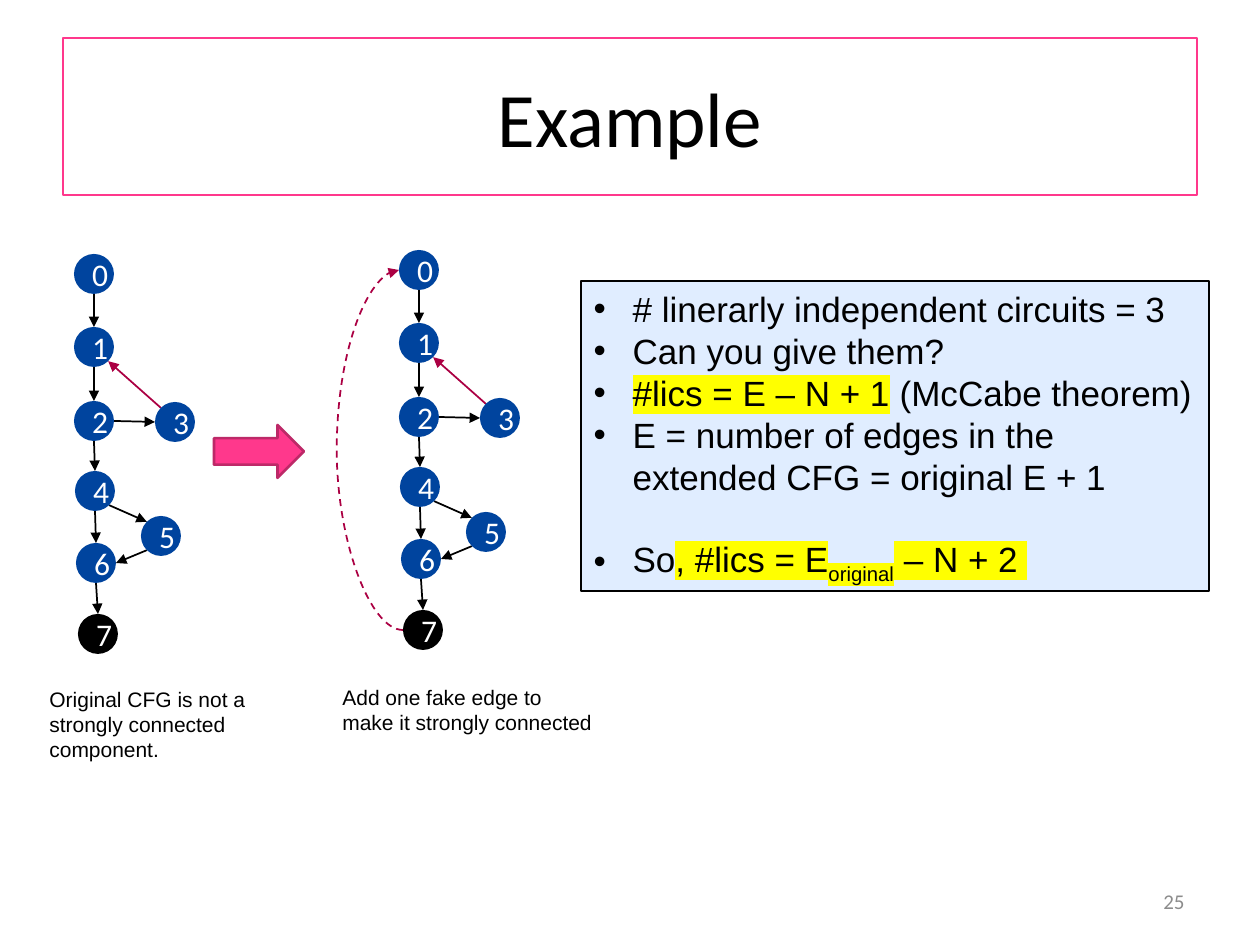
import pptx
import pptx.util
import pptx.dml.color
import pptx.enum.dml
import pptx.enum.shapes
import pptx.enum.text
import pptx.oxml
import pptx.oxml.ns
from lxml import etree

PX = 914400 / 126
COLOURS = {
    "pink": "FF388C", "dark_pink": "BD2968", "crimson": "AB0043",
    "blue": "00449E", "pale_blue": "C3DDFF", "yellow": "FFFF00",
    "black": "000000", "white": "FFFFFF", "grey": "8C8C8C",
}
NODE_SIZE = 40
NODES = [(0, 0), (0, 73), (0, 147), (81, 148), (1, 217), (67, 262), (2, 289), (4, 360)]
# Directions from a node's centre to the points where edges attach.
DIAGONAL = 0.71
SITES = {
    "top": (0, -1), "bottom": (0, 1), "left": (-1, 0), "right": (1, 0),
    "top left": (-DIAGONAL, -DIAGONAL), "bottom left": (-DIAGONAL, DIAGONAL),
    "bottom right": (DIAGONAL, DIAGONAL),
}
EDGES = [
    (0, "bottom", 1, "top", "black"),
    (1, "bottom", 2, "top", "black"),
    (2, "right", 3, "left", "black"),
    (3, "top left", 1, "bottom right", "crimson"),
    (2, "bottom", 4, "top", "black"),
    (4, "bottom right", 5, "top left", "black"),
    (5, "bottom left", 6, "right", "black"),
    (4, "bottom", 6, "top", "black"),
    (6, "bottom", 7, "top", "black"),
]
# Each paragraph is a list of (text, highlighted, subscript).
NOTES = [
    [("# linerarly independent circuits = 3", False, False)],
    [("Can you give them?", False, False)],
    [("#lics = E – N + 1", True, False), (" (McCabe theorem)", False, False)],
    [("E = number of edges in the extended CFG = original E + 1", False, False)],
    [("So", False, False), (", #lics = E", True, False),
     ("original", True, True), (" – N + 2 ", True, False)],
]


def px(*lengths):
    return [pptx.util.Emu(round(length * PX)) for length in lengths]


def rgb(name):
    return pptx.dml.color.RGBColor.from_string(COLOURS[name])


def add_xml(parent, tag, **attributes):
    child = etree.SubElement(parent, pptx.oxml.ns.qn(tag))
    for key, value in attributes.items():
        child.set(key, value)
    return child


def style_line(shape, colour, width):
    shape.line.color.rgb = rgb(colour)
    shape.line.width = pptx.util.Pt(width)


def style_run(span, font, size, colour="black", highlighted=False):
    span.font.size = pptx.util.Pt(size)
    span.font.color.rgb = rgb(colour)
    if highlighted:
        mark = add_xml(span.font._element, "a:highlight")
        add_xml(mark, "a:srgbClr", val=COLOURS["yellow"])
    span.font.name = font


def place(shape, box):
    shape.left, shape.top, shape.width, shape.height = px(*box)


def add_text(page, box, text, font, colour="black"):
    shape = page.shapes.add_textbox(*px(*box))
    shape.text_frame.word_wrap = True
    shape.text_frame.text = text
    style_run(shape.text_frame.paragraphs[0].runs[0], font, 12, colour)
    return shape


def add_title(page, box):
    title = page.shapes.title
    place(title, box)
    style_line(title, "pink", 1)
    title.text_frame.text = "Example"
    style_run(title.text_frame.paragraphs[0].runs[0], "Calibri", 44)


def add_arrow(page, kind, start, end, colour):
    edge = page.shapes.add_connector(kind, *px(*start, *end))
    style_line(edge, colour, 1)
    add_xml(edge.line._get_or_add_ln(), "a:tailEnd", type="triangle")
    add_xml(edge._element.spPr, "a:effectLst")
    return edge


def add_node(page, box, number, colour):
    node = page.shapes.add_shape(pptx.enum.shapes.MSO_SHAPE.OVAL, *px(*box))
    node.shadow.inherit = False
    node.fill.solid()
    node.fill.fore_color.rgb = rgb(colour)
    node.line.fill.background()
    node.text_frame.text = str(number)
    node.text_frame.vertical_anchor = pptx.enum.text.MSO_ANCHOR.MIDDLE
    para = node.text_frame.paragraphs[0]
    para.alignment = pptx.enum.text.PP_ALIGN.CENTER
    style_run(para.runs[0], "Calibri", 18, "white")


def site_point(origin, number, site):
    radius = NODE_SIZE / 2
    return [start + offset + radius * (1 + direction)
            for start, offset, direction in zip(origin, NODES[number], SITES[site])]


def add_flow_graph(page, origin):
    straight = pptx.enum.shapes.MSO_CONNECTOR.STRAIGHT
    for source, out_site, target, in_site, colour in EDGES:
        add_arrow(page, straight, site_point(origin, source, out_site),
                  site_point(origin, target, in_site), colour)
    for number, (x, y) in enumerate(NODES):
        box = (origin[0] + x, origin[1] + y, NODE_SIZE, NODE_SIZE)
        add_node(page, box, number, "black" if number == len(NODES) - 1 else "blue")


def add_fake_edge(page, origin):
    """Dashed curve from the last node back to the first, bulging left."""
    first = site_point(origin, 0, "left")
    last = site_point(origin, len(NODES) - 1, "left")
    curve = add_arrow(page, pptx.enum.shapes.MSO_CONNECTOR.CURVE, first, last, "crimson")
    curve.line.dash_style = pptx.enum.dml.MSO_LINE.DASH
    curve._element.spPr.find(pptx.oxml.ns.qn("a:xfrm")).set("rot", "10800000")
    geometry = curve._element.spPr.find(pptx.oxml.ns.qn("a:prstGeom"))
    guides = geometry.find(pptx.oxml.ns.qn("a:avLst"))
    add_xml(guides, "a:gd", name="adj1", fmla="val 1650000")


def add_step_arrow(page, box):
    arrow = page.shapes.add_shape(pptx.enum.shapes.MSO_SHAPE.RIGHT_ARROW, *px(*box))
    arrow.shadow.inherit = False
    arrow.fill.solid()
    arrow.fill.fore_color.rgb = rgb("pink")
    style_line(arrow, "dark_pink", 1.5)


def add_notes_list(page, box):
    body = page.placeholders[1]
    place(body, box)
    body.fill.solid()
    body.fill.fore_color.rgb = rgb("pale_blue")
    fill_colour = body._element.spPr.find(".//" + pptx.oxml.ns.qn("a:srgbClr"))
    add_xml(fill_colour, "a:alpha", val="50000")
    style_line(body, "black", 0.75)
    frame = body.text_frame
    frame.auto_size = pptx.enum.text.MSO_AUTO_SIZE.NONE
    for index, parts in enumerate(NOTES):
        para = frame.add_paragraph() if index else frame.paragraphs[0]
        para.space_before = pptx.util.Pt(0)
        properties = para._p.get_or_add_pPr()
        indent = px(39)[0]
        properties.set("marL", str(indent))
        properties.set("indent", str(-indent))
        add_xml(properties, "a:buFont", typeface="Arial")
        add_xml(properties, "a:buChar", char="•")
        for text, highlighted, subscript in parts:
            span = para.add_run()
            span.text = text
            style_run(span, "Arial", 20, highlighted=highlighted)
            if subscript:
                span.font._element.set("baseline", "-25000")
    frame.paragraphs[-1].space_before = pptx.util.Pt(23)


def add_page_number(page, box):
    number = add_text(page, box, "25", "Calibri", "grey")
    number.text_frame.vertical_anchor = pptx.enum.text.MSO_ANCHOR.MIDDLE
    number.text_frame.paragraphs[0].alignment = pptx.enum.text.PP_ALIGN.RIGHT


def main():
    deck = pptx.Presentation()
    deck.slide_width, deck.slide_height = px(1260, 945)
    page = deck.slides.add_slide(deck.slide_layouts[1])
    add_title(page, (63, 38, 1134, 157))
    add_page_number(page, (903, 876, 294, 50))
    add_flow_graph(page, (74, 254))
    add_text(page, (37, 680, 248, 90),
             "Original CFG is not a strongly connected component.", "Arial")
    extended = (399, 250)
    add_fake_edge(page, extended)
    add_flow_graph(page, extended)
    add_text(page, (330, 678, 281, 63),
             "Add one fake edge to make it strongly connected", "Arial")
    add_step_arrow(page, (214, 425, 90, 53))
    add_notes_list(page, (581, 281, 628, 310))
    deck.save("out.pptx")


if __name__ == "__main__":
    main()
